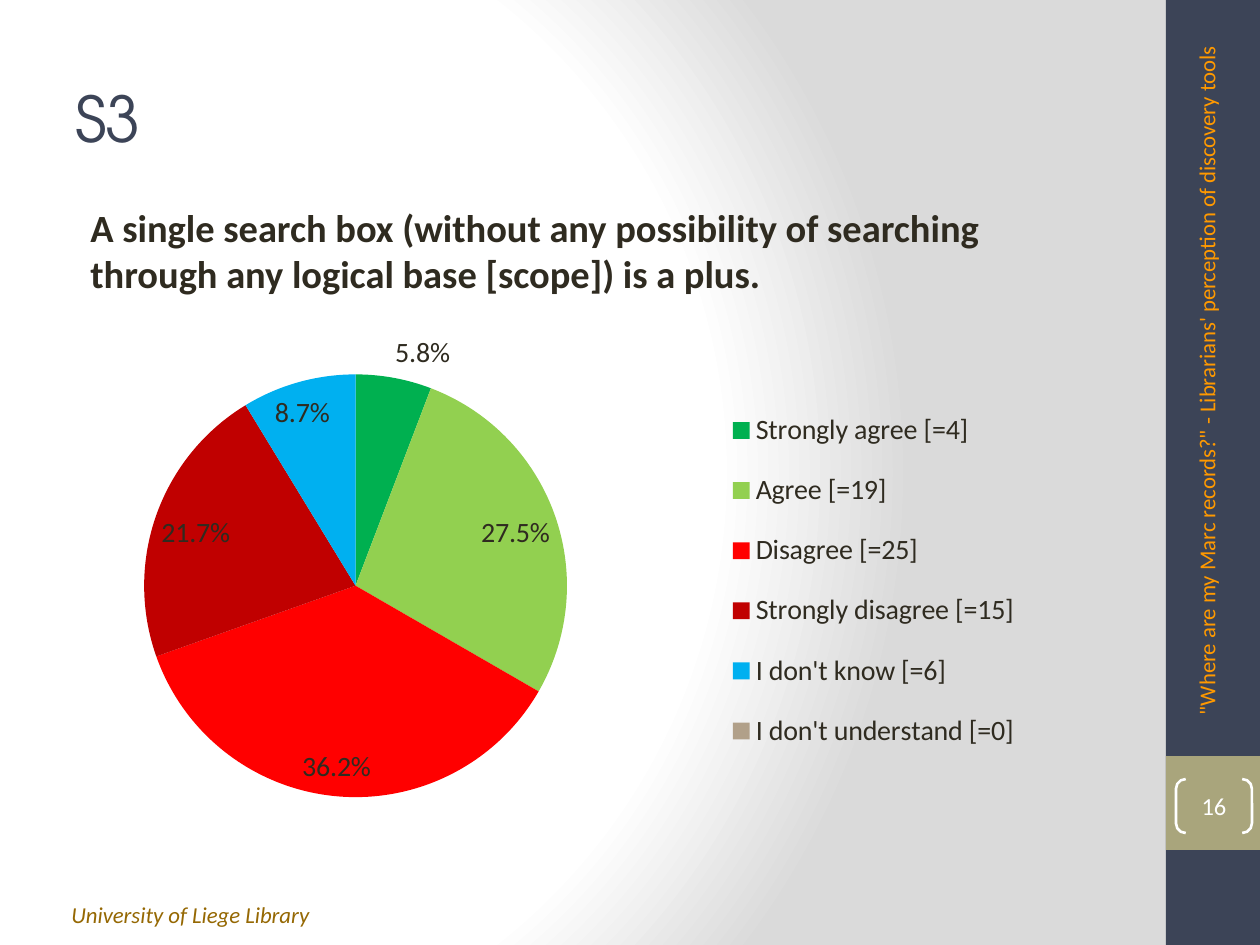
"""Build the S3 survey slide with a pie chart of answers."""
import pptx
import pptx.chart.data
import pptx.dml.color
import pptx.enum.chart
import pptx.enum.shapes
import pptx.enum.text
import pptx.oxml
import pptx.oxml.ns
import pptx.util

COLORS = {
    "navy": "3C4457", "olive": "A9A57C", "ink": "2F2B20", "gold": "956803",
    "orange": "FF9900", "white": "FFFFFF", "gray": "DADADA",
}
ANSWERS = [
    ("Strongly agree [=4]", 0.058, "00B050"),
    ("Agree [=19]", 0.275, "92D050"),
    ("Disagree [=25]", 0.362, "FF0000"),
    ("Strongly disagree [=15]", 0.217, "C00000"),
    ("I don't know [=6]", 0.087, "00B0F0"),
    ("I don't understand [=0]", 0, "B1A089"),
]
Anchor = pptx.enum.text.MSO_ANCHOR
Align = pptx.enum.text.PP_ALIGN
Shapes = pptx.enum.shapes.MSO_SHAPE


def rgb(value):
    return pptx.dml.color.RGBColor.from_string(value)


def px(*values):
    return [round(value * 914400 / 126) for value in values]


class SlideBuilder:
    def __init__(self, presentation, font="Calibri"):
        self.font = font
        self.slide = presentation.slides.add_slide(presentation.slide_layouts[5])

    def background(self, stops, focus):
        fill = self.slide.background.fill
        fill.gradient()
        gradient = self.slide.element.find(".//" + pptx.oxml.ns.qn("a:gradFill"))
        stop_xml = "".join(
            f'<a:gs pos="{place * 1000}"><a:srgbClr val="{COLORS[color]}"/></a:gs>'
            for place, color in stops)
        left, top, right, bottom = (value * 1000 for value in focus)
        gradient.getparent().replace(gradient, pptx.oxml.parse_xml(
            f'<a:gradFill {pptx.oxml.ns.nsdecls("a")} rotWithShape="1">'
            f'<a:gsLst>{stop_xml}</a:gsLst><a:path path="circle">'
            f'<a:fillToRect l="{left}" t="{top}" r="{right}" b="{bottom}"/>'
            '</a:path></a:gradFill>'))

    def style(self, font, size, color, **values):
        font.color.rgb = rgb(COLORS[color])
        values = {"name": self.font, "size": pptx.util.Pt(size), **values}
        for name, value in values.items():
            setattr(font, name, value)

    def put_text(self, shape, text, size, color, anchor=Anchor.TOP,
                 align=Align.LEFT, margin=None, indent=0, **values):
        frame = shape.text_frame
        frame.text = text
        settings = {"word_wrap": True, "vertical_anchor": anchor,
                    "auto_size": pptx.enum.text.MSO_AUTO_SIZE.NONE}
        if margin is not None:
            for side in ("left", "top", "right", "bottom"):
                settings[f"margin_{side}"] = margin
        for name, value in settings.items():
            setattr(frame, name, value)
        paragraph = frame.paragraphs[0]
        paragraph.alignment = align
        if indent:
            paragraph._p.get_or_add_pPr().set("marL", str(px(indent)[0]))
        self.style(paragraph.runs[0].font, size, color, **values)

    def title(self, box, text, size, color, **values):
        shape = self.slide.shapes.title
        shape.left, shape.top, shape.width, shape.height = px(*box)
        self.put_text(shape, text, size, color, Anchor.MIDDLE, **values)
        run = shape.text_frame.paragraphs[0].runs[0]
        run._r.get_or_add_rPr().set("spc", "-100")

    def text(self, box, text, size, color, rotation=0, **values):
        shape = self.slide.shapes.add_textbox(*px(*box))
        shape.rotation = rotation
        self.put_text(shape, text, size, color, **values)

    def shape(self, kind, box, fill=None, line=None):
        shape = self.slide.shapes.add_shape(kind, *px(*box))
        shape.shadow.inherit = False
        if fill:
            shape.fill.solid()
            shape.fill.fore_color.rgb = rgb(COLORS[fill])
        else:
            shape.fill.background()
        if line:
            shape.line.color.rgb = rgb(COLORS[line])
            shape.line.width = pptx.util.Pt(1.5)
        else:
            shape.line.fill.background()
        return shape

    def place(self, parent, before, box, inner=False):
        for old in parent.findall(pptx.oxml.ns.qn("c:layout")):
            parent.remove(old)
        target = '<c:layoutTarget val="inner"/>' if inner else ""
        sizes = "".join(f'<c:{name} val="{value}"/>'
                        for name, value in zip("xywh", box))
        layout = pptx.oxml.parse_xml(
            f'<c:layout {pptx.oxml.ns.nsdecls("c")}><c:manualLayout>{target}'
            '<c:xMode val="edge"/><c:yMode val="edge"/>'
            f'{sizes}</c:manualLayout></c:layout>')
        parent.find(pptx.oxml.ns.qn(before)).addprevious(layout)

    def pie(self, box, answers, size, color):
        data = pptx.chart.data.CategoryChartData(number_format="0.0%")
        data.categories = [name for name, _, _ in answers]
        data.add_series("Series 1", [value for _, value, _ in answers])
        chart = self.slide.shapes.add_chart(
            pptx.enum.chart.XL_CHART_TYPE.PIE, *px(*box), data).chart
        chart.has_title = False
        chart.has_legend = True
        chart.legend.position = pptx.enum.chart.XL_LEGEND_POSITION.RIGHT
        chart.legend.include_in_layout = False
        self.style(chart.font, 10, color)
        self.style(chart.legend.font, size, color)
        plot = chart.plots[0]
        plot.vary_by_categories = True
        series = plot.series[0]
        for index, (_, _, point_color) in enumerate(answers):
            fill = series.points[index].format.fill
            fill.solid()
            fill.fore_color.rgb = rgb(point_color)
        labels = series.data_labels
        settings = {"show_value": True, "number_format": '0.0%;;""',
                    "number_format_is_linked": False,
                    "position": pptx.enum.chart.XL_LABEL_POSITION.BEST_FIT}
        for name, value in settings.items():
            setattr(labels, name, value)
        self.style(labels.font, size, color)
        area = chart.element.find(".//" + pptx.oxml.ns.qn("c:plotArea"))
        self.place(area, "c:pieChart", (0.09, 0.1, 0.4, 0.86), inner=True)
        legend = chart.element.find(".//" + pptx.oxml.ns.qn("c:legend"))
        self.place(legend, "c:overlay", (0.63, 0.13, 0.3, 0.78))


def main():
    presentation = pptx.Presentation()
    presentation.slide_width, presentation.slide_height = px(1260, 945)
    builder = SlideBuilder(presentation)
    builder.background([(0, "white"), (75, "white"), (100, "gray")],
                       (20, 50, 100, 50))
    builder.shape(Shapes.RECTANGLE, (1166, 0, 94, 945), "navy")
    builder.shape(Shapes.RECTANGLE, (1166, 756, 94, 94), "olive")
    builder.text((59, 895, 670, 40), "University of Liege Library", 13, "gold",
                 italic=True)
    builder.title((63, 38, 1050, 158), "S3", 36, "navy",
                  name="TeX Gyre Adventor")
    builder.text((63, 198, 1050, 110),
                 "A single search box (without any possibility of searching "
                 "through any logical base [scope]) is a plus.",
                 22, "ink", indent=15, bold=True)
    number = builder.shape(Shapes.DOUBLE_BRACKET, (1176, 779, 76, 54),
                           line="white")
    number.adjustments[0] = 0.18
    builder.put_text(number, "16", 14, "white", Anchor.MIDDLE, Align.CENTER, 0)
    builder.text((861, 352, 701, 50),
                 "\"Where are my Marc records?\" - Librarians' perception of "
                 "discovery tools", 13, "orange", rotation=270)
    builder.pie((49, 323, 1057, 496), ANSWERS, 16, "ink")
    presentation.save("out.pptx")


if __name__ == "__main__":
    main()
